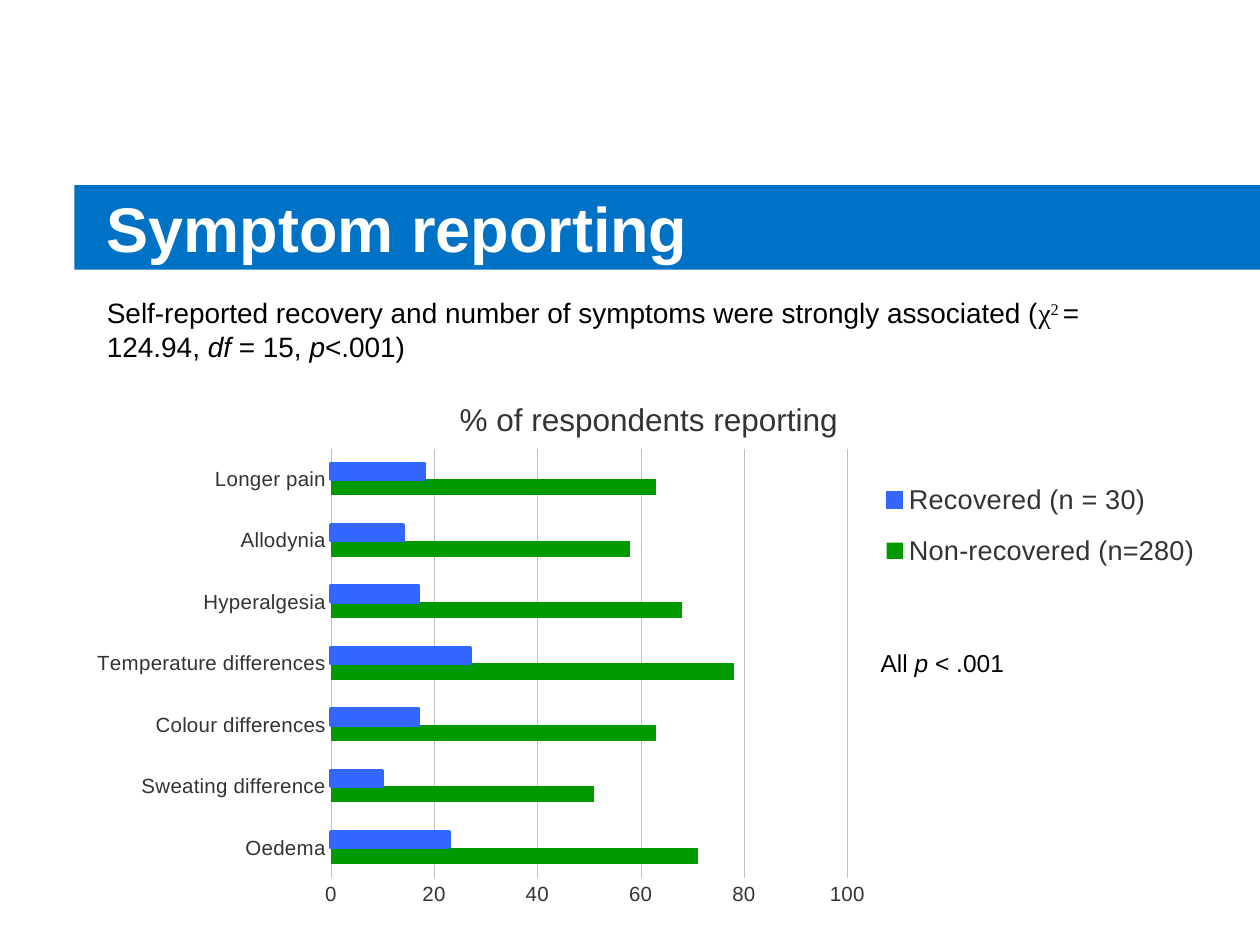
from pptx import Presentation
from pptx.chart.data import CategoryChartData as Data
from pptx.dml.color import RGBColor
from pptx.enum.chart import XL_CHART_TYPE as Kind, XL_LEGEND_POSITION as Side, XL_TICK_MARK as Tick
from pptx.enum.shapes import MSO_SHAPE as Shape
from pptx.enum.text import MSO_ANCHOR as Anchor
from pptx.oxml import parse_xml
from pptx.oxml.ns import nsdecls
from pptx.util import Inches, Pt

GREY, RULE = "333333", "C0C0C0"
CATS = ["Oedema", "Sweating difference", "Colour differences",
        "Temperature differences", "Hyperalgesia", "Allodynia", "Longer pain"]
SERIES = [("Non-recovered (n=280)", "009900", 0, [71, 51, 63, 78, 68, 58, 63]),
          ("Recovered (n = 30)", "3366FF", 1.94, [23, 10, 17, 27, 17, 14, 18])]


def hue(code):
    return RGBColor.from_string(code)


def style(font, size, color, **more):
    values = {"size": Pt(size), "name": "Arial", "bold": False, **more}
    for key, value in values.items():
        setattr(font, key, value)
    font.color.rgb = hue(color)


def stroke(line, color, width):
    line.color.rgb = hue(color)
    line.width = Pt(width)


def write(slide, box, runs, size, color="000000", anchor=Anchor.TOP, **more):
    frame = slide.shapes.add_textbox(*map(Inches, box)).text_frame
    frame.word_wrap = True
    frame.vertical_anchor = anchor
    for text, extra, *base in runs:
        run = frame.paragraphs[0].add_run()
        run.text = text
        style(run.font, size, color, **{**more, **extra})
        if base:
            run.font._element.set("baseline", str(base[0]))


def banner(slide, box):
    left, top, width, height = box
    bar = slide.shapes.add_shape(Shape.RECTANGLE, *map(Inches, box))
    bar.shadow.inherit = False
    bar.fill.solid()
    bar.fill.fore_color.rgb = hue("0072C6")
    bar.line.fill.background()
    write(slide, (left + 0.16, top, width - 0.35, height), [("Symptom reporting", {})],
          36, "FFFFFF", Anchor.MIDDLE, bold=True)


def place(node, x, y, w=None, h=None, inner=False):
    old = node.find("{*}layout")
    if old is not None:
        node.remove(old)
    target = '<c:layoutTarget val="inner"/>' if inner else ""
    modes = '<c:xMode val="edge"/><c:yMode val="edge"/>'
    sizes = "".join(f'<c:{key} val="{value}"/>'
                    for key, value in zip("xywh", (x, y, w, h)) if value is not None)
    layout = parse_xml(f'<c:layout {nsdecls("c")}><c:manualLayout>{target}{modes}{sizes}'
                       '</c:manualLayout></c:layout>')
    prior = node.find("{*}tx")
    if prior is None:
        prior = node.find("{*}legendPos")
    if prior is None:
        node.insert(0, layout)
    else:
        prior.addnext(layout)


def graph(slide, box):
    data = Data()
    data.categories = CATS
    for name, _, _, values in SERIES:
        data.add_series(name, values)
    chart = slide.shapes.add_chart(Kind.BAR_CLUSTERED, *map(Inches, box), data).chart
    style(chart.font, 12.9, "000000")

    chart.has_title = True
    title = chart.chart_title
    title.text_frame.text = "% of respondents reporting"
    style(title.text_frame.paragraphs[0].runs[0].font, 18, GREY)
    title.include_in_layout = False

    chart.has_legend = True
    legend = chart.legend
    legend.position = Side.RIGHT
    legend.include_in_layout = False
    style(legend.font, 15.5, GREY)

    cat, val = chart.category_axis, chart.value_axis
    for axis in (cat, val):
        axis.major_tick_mark = axis.minor_tick_mark = Tick.NONE
        style(axis.tick_labels.font, 11.7, GREY)
    cat.has_major_gridlines = False
    stroke(cat.format.line, RULE, 0.25)
    val.format.line.fill.background()
    val.minimum_scale, val.maximum_scale, val.major_unit = 0, 100, 20
    val.has_major_gridlines = True
    stroke(val.major_gridlines.format.line, RULE, 0.25)

    plot = chart.plots[0]
    plot.gap_width, plot.overlap, plot.vary_by_categories = 182, 0, False
    for series, (_, color, width, _) in zip(plot.series, SERIES):
        series.invert_if_negative = False
        series.format.fill.solid()
        series.format.fill.fore_color.rgb = hue(color)
        if width:
            stroke(series.format.line, color, width)
        else:
            series.format.line.fill.background()

    place(title._element, 0.33, 0.05)
    place(legend._element, 0.68, 0.18, 0.32, 0.22)
    place(chart._chartSpace.chart.plotArea, 0.223, 0.151, 0.449, 0.779, True)


def main():
    deck = Presentation()
    deck.slide_width, deck.slide_height = Inches(10), Inches(7.5)
    slide = deck.slides.add_slide(deck.slide_layouts[6])
    slant, greek = {"italic": True}, {"name": "Times New Roman"}
    banner(slide, (0.59, 1.47, 9.41, 0.67))
    graph(slide, (0.59, 2.9, 9.13, 4.38))
    write(slide, (6.89, 5.09, 1.45, 0.34),
          [("All ", {}), ("p", slant), (" < .001", {})], 14)
    write(slide, (0.75, 2.3, 8.58, 0.64),
          [("Self-reported recovery and number of symptoms were strongly associated (", {}),
           ("χ", greek), ("2 ", greek, 30000), ("= 124.94, ", {}), ("df", slant),
           (" = 15, ", {}), ("p", slant), ("<.001)", {})], 16)
    deck.save("out.pptx")


if __name__ == "__main__":
    main()
